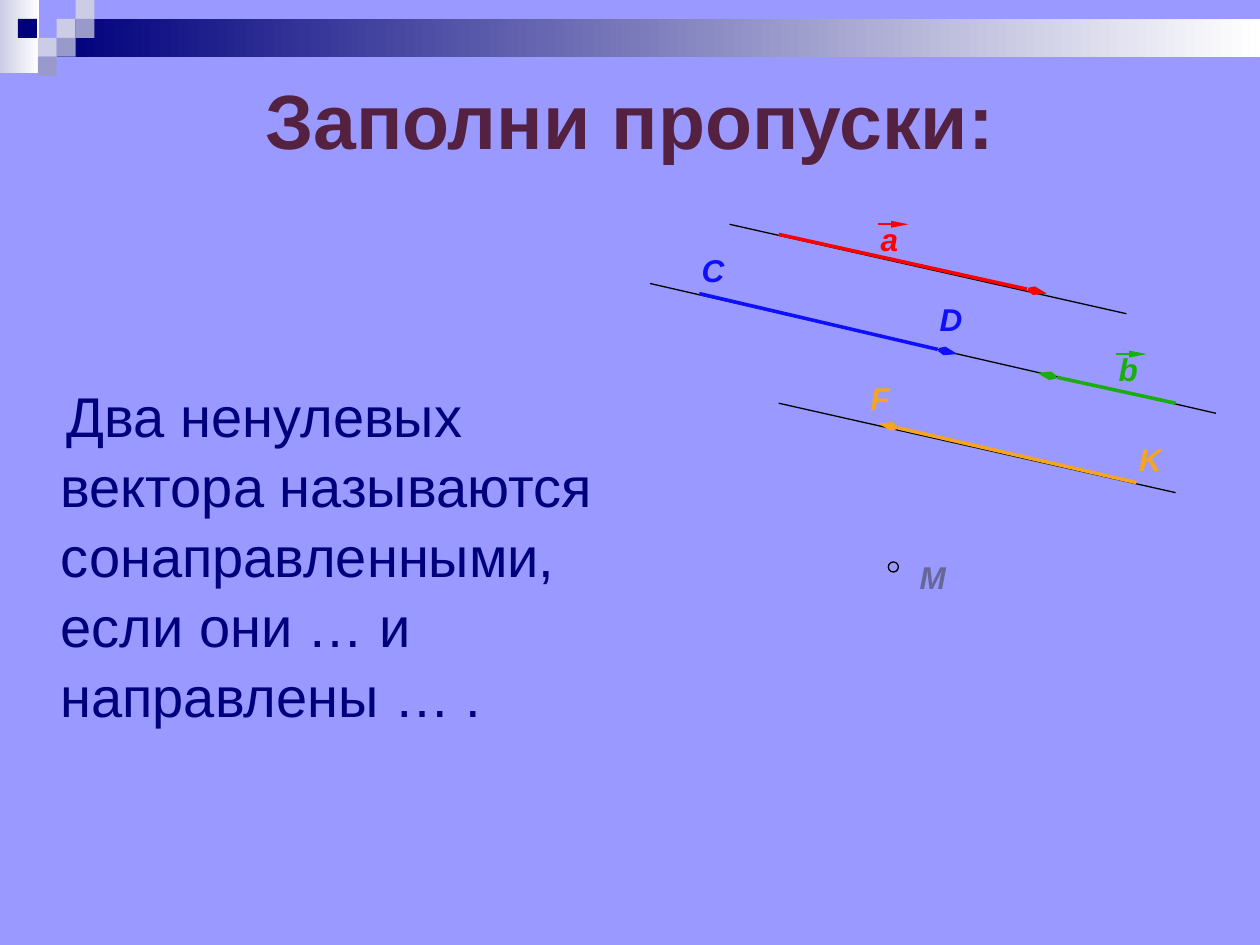
from dataclasses import dataclass

from lxml import etree
from pptx import Presentation
from pptx.dml.color import RGBColor
from pptx.enum.shapes import MSO_CONNECTOR, MSO_SHAPE
from pptx.enum.text import MSO_ANCHOR, MSO_AUTO_SIZE, PP_ALIGN
from pptx.oxml.ns import qn
from pptx.util import Inches, Pt

RECT, OVAL = MSO_SHAPE.RECTANGLE, MSO_SHAPE.OVAL
STRAIGHT = MSO_CONNECTOR.STRAIGHT
LEFT, CENTER = PP_ALIGN.LEFT, PP_ALIGN.CENTER
TOP, MIDDLE = MSO_ANCHOR.TOP, MSO_ANCHOR.MIDDLE
NO_FIT, GROW = MSO_AUTO_SIZE.NONE, MSO_AUTO_SIZE.SHAPE_TO_FIT_TEXT


@dataclass(frozen=True)
class Theme:
    """Colours, font and type sizes of the deck."""
    font: str = "Arial"
    back: str = "9999FF"
    navy: str = "00007D"
    pale: str = "CCCCE6"
    mid: str = "9999CC"
    white: str = "FFFFFF"
    black: str = "000000"
    title: str = "542240"
    red: str = "FF0000"
    blue: str = "0F0FFF"
    orange: str = "F7A51F"
    green: str = "19AE0E"
    slate: str = "666699"
    title_pt: int = 44
    body_pt: int = 32
    label_pt: int = 18


T = Theme()


def rgb(value):
    """Turn a hex string into a colour."""
    return RGBColor.from_string(value)


def place(sp, x, y, w, h):
    """Set a shape's box in inches."""
    sp.left, sp.top, sp.width, sp.height = map(Inches, (x, y, w, h))


def write(sp, text, size, color, bold=False, italic=False, align=LEFT,
          anchor=TOP, fit=NO_FIT, before=0):
    """Fill a shape with one formatted paragraph and return it."""
    tf = sp.text_frame
    tf.word_wrap, tf.auto_size, tf.vertical_anchor = True, fit, anchor
    p = tf.paragraphs[0]
    p.alignment, p.space_before = align, Pt(before)
    r = p.add_run()
    r.text = text
    font = r.font
    font.name, font.size, font.bold, font.italic = T.font, Pt(size), bold, italic
    font.color.rgb = rgb(color)
    return p


def add_block(s, x, y, w, h, color, fade=None, kind=RECT, line=None):
    """Add a filled shape, optionally fading rightwards or outlined."""
    sp = s.shapes.add_shape(kind, *map(Inches, (x, y, w, h)))
    sp.shadow.inherit = False
    if fade:
        sp.fill.gradient()
        sp.fill.gradient_angle = 0
        for stop, value in zip(sp.fill.gradient_stops, (color, fade)):
            stop.color.rgb = rgb(value)
    else:
        sp.fill.solid()
        sp.fill.fore_color.rgb = rgb(color)
    if line:
        sp.line.color.rgb = rgb(line)
        sp.line.width = Pt(0.75)
    else:
        sp.line.fill.background()


def add_line(s, x1, y1, x2, y2, color=T.black, width=0.75, head=None):
    """Add a straight line with an optional arrowhead at its end."""
    sp = s.shapes.add_connector(STRAIGHT, *map(Inches, (x1, y1, x2, y2)))
    sp.line.color.rgb = rgb(color)
    sp.line.width = Pt(width)
    if head:
        etree.SubElement(sp.line._get_or_add_ln(), qn("a:tailEnd"),
                         type=head, w="sm", len="lg")
    etree.SubElement(sp._element.spPr, qn("a:effectLst"))


def add_label(s, x, y, text, color, w=0.55, over_arrow=False):
    """Add a letter, with a vector arrow above it if asked."""
    sp = s.shapes.add_textbox(*map(Inches, (x, y, w, 0.4)))
    write(sp, text, T.label_pt, color, bold=True, italic=True, fit=GROW, before=2)
    if over_arrow:
        add_line(s, x + 0.08, y + 0.08, x + 0.32, y + 0.08, color, 1.25, "triangle")


def add_header(s, x, y, w):
    """Draw the gradient bar and its checkered corner."""
    cell = 0.15
    add_block(s, x, y, 0.31, 0.58, T.pale, T.white)
    add_block(s, x + 3 * cell, y + cell, w - 3 * cell, 2 * cell, T.navy, T.white)
    cells = ((3, 1, T.pale), (4, 0, T.pale), (4, 1, T.mid), (2, 2, T.pale),
             (0.95, 1, T.navy), (3, 2, T.mid), (2, 3, T.mid))
    for col, row, color in cells:
        add_block(s, x + col * cell, y + row * cell, cell, cell, color)


def add_title(s, x, y, w, h):
    """Fill the title placeholder."""
    sp = s.shapes.title
    place(sp, x, y, w, h)
    write(sp, "Заполни пропуски:", T.title_pt, T.title, bold=True,
          align=CENTER, anchor=MIDDLE)


def add_body(s, x, y, w, h):
    """Fill the body placeholder with the unbulleted statement."""
    sp = s.placeholders[1]
    place(sp, x, y, w, h)
    p = write(sp, "Два ненулевых вектора называются сонаправленными, "
              "если они … и направлены … .", T.body_pt, T.navy, before=2)
    p.line_spacing = 1.04
    pPr = p._p.get_or_add_pPr()
    pPr.set("marL", str(Inches(0.38)))
    pPr.set("indent", str(Inches(0.05)))
    etree.SubElement(pPr, qn("a:buNone"))


def add_diagram(s, x, y):
    """Draw the parallel lines, their vectors, the letters and point M."""
    lines = ((1.02, 1.5, 4.17, 2.21), (4.49, 1.58, 0, 0.55),
             (0.63, 0.08, 3.78, 0.79))
    vectors = ((1.02, 0.16, 3.15, 0.63, T.red), (0.39, 0.63, 2.44, 1.11, T.blue),
               (3.86, 2.13, 1.81, 1.66, T.orange), (4.17, 1.5, 3.07, 1.26, T.green))
    labels = ((1.73, 0, "a", T.red), (0.31, 0.24, "C", T.blue),
              (2.2, 0.63, "D", T.blue), (1.65, 1.26, "F", T.orange),
              (3.78, 1.74, "K", T.orange), (3.62, 1.03, "b", T.green),
              (2.04, 2.68, "M", T.slate))
    for x1, y1, x2, y2 in lines:
        add_line(s, x + x1, y + y1, x + x2, y + y2)
    for x1, y1, x2, y2, color in vectors:
        add_line(s, x + x1, y + y1, x + x2, y + y2, color, 2, "arrow")
    for dx, dy, text, color in labels:
        add_label(s, x + dx, y + dy, text, color, over_arrow=text.islower())
    add_block(s, x + 1.89, y + 2.76, 0.08, 0.08, T.back, kind=OVAL, line=T.black)


def main():
    """Build and save the slide."""
    prs = Presentation()
    prs.slide_width, prs.slide_height = Inches(10), Inches(7.5)
    s = prs.slides.add_slide(prs.slide_layouts[1])
    s.background.fill.solid()
    s.background.fill.fore_color.rgb = rgb(T.back)
    add_header(s, 0, 0, 10)
    add_title(s, 0.5, 0.5, 9, 0.89)
    add_body(s, 0, 2.96, 5.16, 5.2)
    add_diagram(s, 5.16, 1.7)
    prs.save("out.pptx")


if __name__ == "__main__":
    main()
